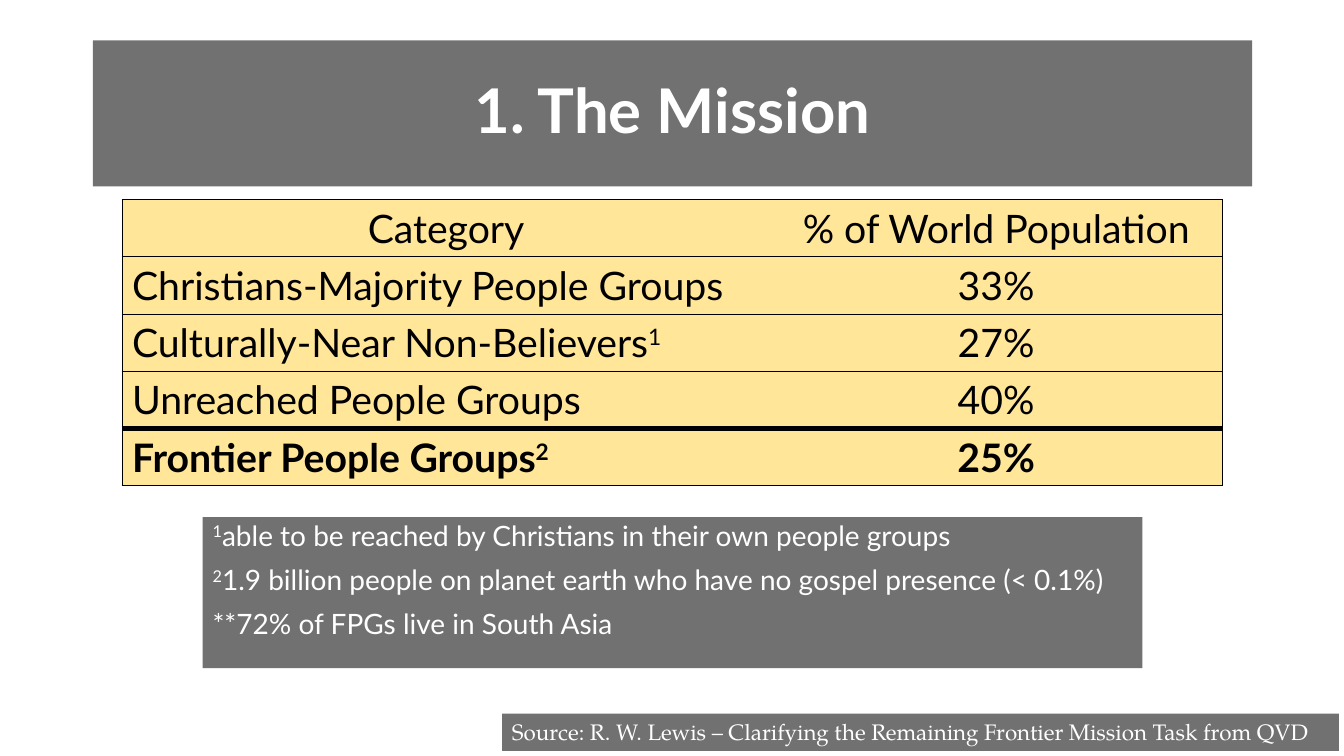
from lxml.etree import SubElement
from pptx import Presentation
from pptx.dml.color import RGBColor
from pptx.enum.shapes import MSO_SHAPE
from pptx.enum.text import MSO_ANCHOR, PP_ALIGN
from pptx.oxml.ns import qn
from pptx.util import Inches, Pt

WHITE, BLACK, GRAY, SAND = "FFFFFF", "000000", "262626", "FFE699"


def paint(fill, color, opacity=100):
    fill.solid()
    fill.fore_color.rgb = RGBColor.from_string(color)
    if opacity < 100:
        tint = fill._xPr.find(qn("a:solidFill"))[0]
        SubElement(tint, qn("a:alpha"), val=str(opacity * 1000))


def add_span(para, text, size, color, font="Lato", bold=False, raised=False):
    span = para.add_run()
    span.text = text
    span.font.size = Pt(size)
    span.font.name = font
    span.font.bold = bold
    span.font.color.rgb = RGBColor.from_string(color)
    if raised:
        span._r.get_or_add_rPr().set("baseline", "30000")


deck = Presentation()
deck.slide_width, deck.slide_height = Inches(13.33), Inches(7.5)
page = deck.slides.add_slide(deck.slide_layouts[5])

# Title band
title = page.shapes.title
title.left, title.top = Inches(0.92), Inches(0.4)
title.width, title.height = Inches(11.5), Inches(1.45)
paint(title.fill, GRAY, 65)
title.text_frame.vertical_anchor = MSO_ANCHOR.MIDDLE
para = title.text_frame.paragraphs[0]
para.alignment = PP_ALIGN.CENTER
para.line_spacing = 0.9
add_span(para, "1. The Mission", 44, WHITE, bold=True)

# Population table: category, footnote mark, share
rows = [
    ("Category", "", "% of World Population"),
    ("Christians-Majority People Groups", "", "33%"),
    ("Culturally-Near Non-Believers", "1", "27%"),
    ("Unreached People Groups", "", "40%"),
    ("Frontier People Groups", "2", "25%"),
]
last = len(rows) - 1
table = page.shapes.add_table(len(rows), 2, Inches(1.21), Inches(1.98),
                              Inches(10.91), Inches(2.83)).table
table.first_row = table.horz_banding = False
table.columns[0].width, table.columns[1].width = Inches(6.43), Inches(4.48)

for r, (category, mark, share) in enumerate(rows):
    for c, text in enumerate((category, share)):
        cell = table.cell(r, c)
        # Thin outline and row rules, a thick rule above the last row
        borders = {
            "lnL": 0.5 if c == 0 else 0,
            "lnR": 0.5 if c == 1 else 0,
            "lnT": 4 if r == last else 0.5,
            "lnB": 4 if r == last - 1 else 0.5,
        }
        for side, width in borders.items():
            line = SubElement(cell._tc.get_or_add_tcPr(), qn(f"a:{side}"), w=str(Pt(width)))
            if width:
                SubElement(SubElement(line, qn("a:solidFill")), qn("a:srgbClr"), val=BLACK)
            else:
                SubElement(line, qn("a:noFill"))
        paint(cell.fill, SAND)
        para = cell.text_frame.paragraphs[0]
        para.alignment = PP_ALIGN.CENTER if r == 0 or c == 1 else PP_ALIGN.LEFT
        add_span(para, text, 28, BLACK, bold=r == last)
        if mark and c == 0:
            add_span(para, mark, 28, BLACK, bold=r == last, raised=True)

# Source line and footnotes: place, wrapping, font, size, space before, spacing, lines
sheets = [
    ((4.98, 7.08, 8.3, 0.37), False, "TeX Gyre Pagella", 16, 0, 1,
     [("", "Source: R. W. Lewis – Clarifying the Remaining Frontier Mission Task from QVD")]),
    ((2.01, 5.13, 9.32, 1.5), True, "Lato", 20, 10, 0.9,
     [("1", "able to be reached by Christians in their own people groups"),
      ("2", "1.9 billion people on planet earth who have no gospel presence (< 0.1%)"),
      ("", "**72% of FPGs live in South Asia")]),
]
for place, wrap, font, size, before, spacing, lines in sheets:
    box = page.shapes.add_shape(MSO_SHAPE.RECTANGLE, *map(Inches, place))
    box.shadow.inherit = False
    box.line.fill.background()
    paint(box.fill, GRAY, 65)
    frame = box.text_frame
    frame.word_wrap = wrap
    frame.vertical_anchor = MSO_ANCHOR.TOP
    for i, (mark, text) in enumerate(lines):
        para = frame.add_paragraph() if i else frame.paragraphs[0]
        para.alignment = PP_ALIGN.LEFT
        para.space_before = Pt(before)
        para.line_spacing = float(spacing)
        if mark:
            add_span(para, mark, size, WHITE, font, raised=True)
        add_span(para, text, size, WHITE, font)

deck.save("out.pptx")
